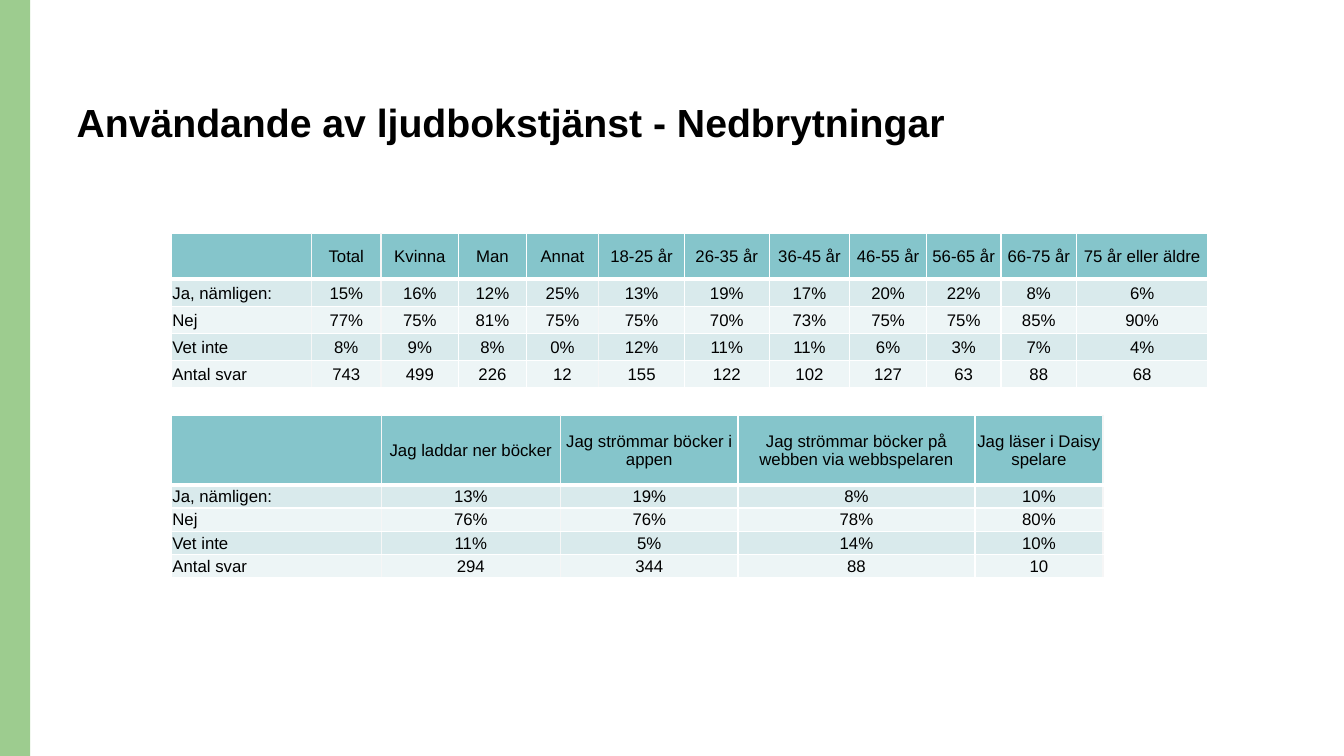
from lxml.etree import SubElement
from pptx import Presentation
from pptx.dml.color import RGBColor
from pptx.enum.shapes import MSO_SHAPE
from pptx.enum.text import MSO_ANCHOR, PP_ALIGN
from pptx.oxml.ns import qn
from pptx.util import Inches, Pt

HEADER, BANDS = "85C5CB", ("EDF5F6", "D9EAEC")
WHITE, PALE = "FFFFFF", "F6F6F6"
LABELS = ["Ja, nämligen:", "Nej", "Vet inte", "Antal svar"]

GROUPS = ["Total", "Kvinna", "Man", "Annat", "18-25 år", "26-35 år", "36-45 år",
          "46-55 år", "56-65 år", "66-75 år", "75 år eller äldre"]
GROUP_VALUES = [
    ["15%", "16%", "12%", "25%", "13%", "19%", "17%", "20%", "22%", "8%", "6%"],
    ["77%", "75%", "81%", "75%", "75%", "70%", "73%", "75%", "75%", "85%", "90%"],
    ["8%", "9%", "8%", "0%", "12%", "11%", "11%", "6%", "3%", "7%", "4%"],
    ["743", "499", "226", "12", "155", "122", "102", "127", "63", "88", "68"],
]
GROUP_WIDTHS = [1.39, 0.69, 0.77, 0.67, 0.72, 0.85, 0.84, 0.8, 0.76, 0.74, 0.75, 1.3]

METHODS = ["Jag laddar ner böcker", "Jag strömmar böcker i appen",
           "Jag strömmar böcker på webben via webbspelaren",
           "Jag läser i Daisy spelare"]
METHOD_VALUES = [
    ["13%", "19%", "8%", "10%"],
    ["76%", "76%", "78%", "80%"],
    ["11%", "5%", "14%", "10%"],
    ["294", "344", "88", "10"],
]
METHOD_WIDTHS = [2.08, 1.78, 1.76, 2.35, 1.27]


def rgb(value):
    return RGBColor.from_string(value)


def set_attrs(obj, values):
    for name, value in values.items():
        setattr(obj, name, value)


def style_run(r, size, bold=False):
    set_attrs(r.font, {"name": "Arial", "size": Pt(size), "bold": bold})
    r.font.color.rgb = rgb("000000")


def add_side_bar(slide):
    sp = slide.shapes.add_shape(MSO_SHAPE.RECTANGLE, 0, 0, Inches(0.3), Inches(7.5))
    sp.shadow.inherit = False
    sp.fill.solid()
    sp.fill.fore_color.rgb = rgb("9DCC8F")
    sp.line.fill.background()


def set_title(slide, text):
    sp = slide.shapes.title
    set_attrs(sp, {"left": Inches(0.66), "top": Inches(0.51),
                   "width": Inches(11.95), "height": Inches(0.99)})
    tf = sp.text_frame
    set_attrs(tf, {"vertical_anchor": MSO_ANCHOR.BOTTOM, "word_wrap": True})
    p = tf.paragraphs[0]
    set_attrs(p, {"alignment": PP_ALIGN.LEFT, "line_spacing": 0.9})
    r = p.add_run()
    r.text = text
    style_run(r, 28, bold=True)


def add_border(cell, side, color, width):
    tc_pr = cell._tc.get_or_add_tcPr()
    ln = SubElement(tc_pr, qn(f"a:ln{side}"), w=str(Pt(width)))
    SubElement(SubElement(ln, qn("a:solidFill")), qn("a:srgbClr"), val=color)


def format_cell(cell, text, fill, align, left, right, bottom_width):
    """Borders go in before the fill, as the cell schema requires."""
    add_border(cell, "L", left, 1)
    add_border(cell, "R", right, 1)
    add_border(cell, "T", WHITE, 1)
    add_border(cell, "B", WHITE, bottom_width)
    cell.fill.solid()
    cell.fill.fore_color.rgb = rgb(fill)
    set_attrs(cell, {"vertical_anchor": MSO_ANCHOR.MIDDLE,
                     "margin_left": Inches(0.01), "margin_right": Inches(0.01),
                     "margin_top": Inches(0.01), "margin_bottom": 0})
    if text:
        p = cell.text_frame.paragraphs[0]
        p.alignment = align
        r = p.add_run()
        r.text = text
        style_run(r, 12)


def add_breakdown(slide, top, widths, heights, headings, values, pale_edges):
    rows = [[""] + headings] + [[label] + row for label, row in zip(LABELS, values)]
    table = slide.shapes.add_table(
        len(rows), len(widths), Inches(1.7), Inches(top),
        Inches(sum(widths)), Inches(sum(heights))).table
    set_attrs(table, {"first_row": False, "horz_banding": False})
    for column, width in zip(table.columns, widths):
        column.width = Inches(width)
    for row, height in zip(table.rows, heights):
        row.height = Inches(height)
    for i, row in enumerate(rows):
        fill = BANDS[i % 2] if i else HEADER
        for j, text in enumerate(row):
            left, right = (PALE if edge in pale_edges else WHITE for edge in (j, j + 1))
            align = PP_ALIGN.CENTER if j else PP_ALIGN.LEFT
            format_cell(table.cell(i, j), text, fill, align, left, right, 1 if i else 3)


def main():
    prs = Presentation()
    set_attrs(prs, {"slide_width": Inches(13.33), "slide_height": Inches(7.5)})
    slide = prs.slides.add_slide(prs.slide_layouts[5])
    add_side_bar(slide)
    set_title(slide, "Användande av ljudbokstjänst - Nedbrytningar")
    add_breakdown(slide, 2.32, GROUP_WIDTHS, [0.45] + [0.27] * 4,
                  GROUPS, GROUP_VALUES, {1, 2, 5})
    add_breakdown(slide, 4.12, METHOD_WIDTHS, [0.69, 0.23, 0.23, 0.23, 0.23],
                  METHODS, METHOD_VALUES, {1, 2, 5})
    prs.save("out.pptx")


if __name__ == "__main__":
    main()
